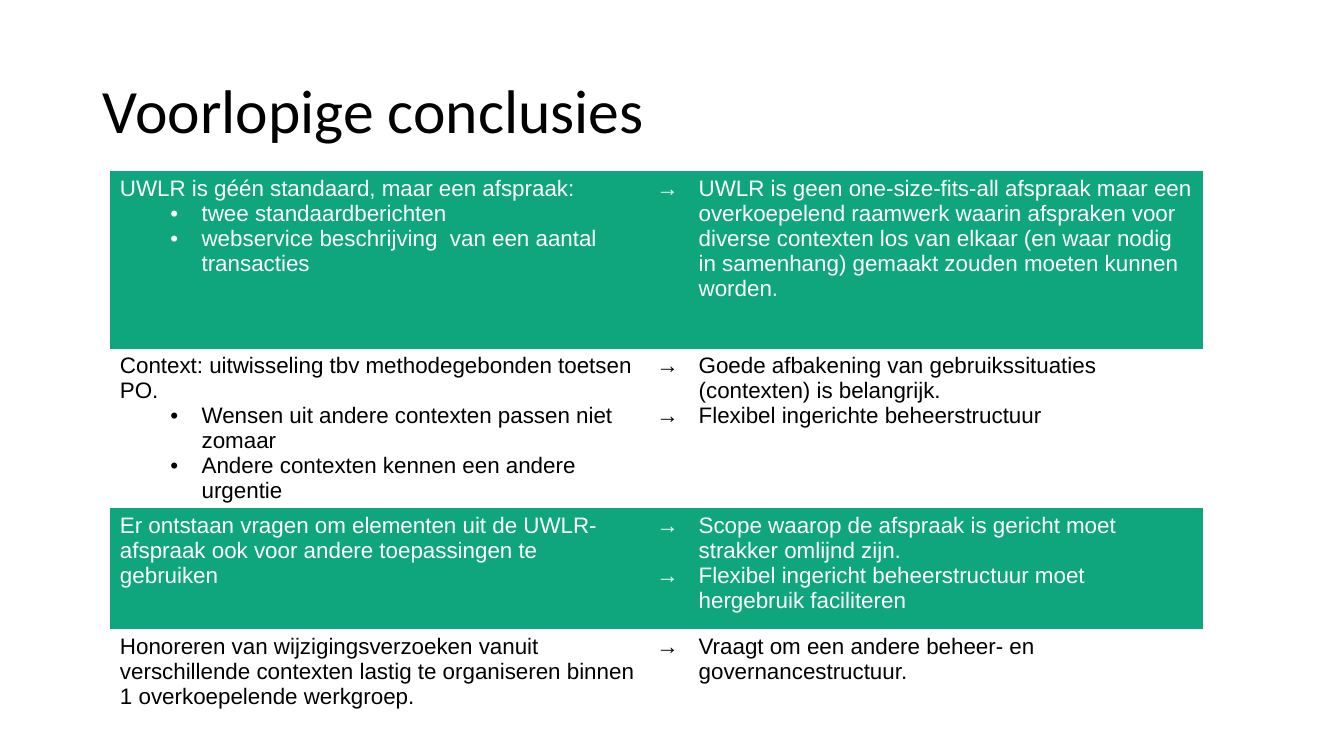
from dataclasses import dataclass

from lxml.etree import SubElement
from pptx import Presentation
from pptx.dml.color import RGBColor
from pptx.enum.text import MSO_ANCHOR, MSO_AUTO_SIZE, PP_ALIGN
from pptx.oxml.ns import qn
from pptx.util import Emu, Pt

GREEN = RGBColor(0x0F, 0xA6, 0x7E)
WHITE = RGBColor(0xFF, 0xFF, 0xFF)
BLACK = RGBColor(0x00, 0x00, 0x00)

PX_PER_INCH = 100
EMU_PER_PX = 914400 // PX_PER_INCH
PLAIN_TABLE_STYLE = "{2D5ABB26-0587-4C30-8999-92F81FD0307C}"
ARROW = "→"
LINE_GAP = 17.8  # height in points of one line of 16 pt text

COLUMN_WIDTHS = (532, 42, 510)


@dataclass(frozen=True)
class Finding:
    height: int
    statement: str
    points: tuple[str, ...]
    conclusions: tuple[str, ...]


FINDINGS = (
    Finding(
        176,
        "UWLR is géén standaard, maar een afspraak:",
        ("twee standaardberichten",
         "webservice beschrijving  van een aantal transacties"),
        ("UWLR is geen one-size-fits-all afspraak maar een overkoepelend raamwerk "
         "waarin afspraken voor diverse contexten los van elkaar (en waar nodig in "
         "samenhang) gemaakt zouden moeten kunnen worden.",),
    ),
    Finding(
        142,
        "Context: uitwisseling tbv methodegebonden toetsen PO.",
        ("Wensen uit andere contexten passen niet zomaar",
         "Andere contexten kennen een andere urgentie"),
        ("Goede afbakening van gebruikssituaties (contexten) is belangrijk.",
         "Flexibel ingerichte beheerstructuur"),
    ),
    Finding(
        120,
        "Er ontstaan vragen om elementen uit de UWLR-afspraak ook voor andere "
        "toepassingen te gebruiken",
        (),
        ("Scope waarop de afspraak is gericht moet strakker omlijnd zijn.",
         "Flexibel ingericht beheerstructuur moet hergebruik faciliteren"),
    ),
    Finding(
        120,
        "Honoreren van wijzigingsverzoeken vanuit verschillende contexten lastig te "
        "organiseren binnen 1 overkoepelende werkgroep.",
        (),
        ("Vraagt om een andere beheer- en governancestructuur.",),
    ),
)


def px(length: int) -> Emu:
    return Emu(length * EMU_PER_PX)


def add_bullet(para) -> None:
    para.level = 1
    properties = para._p.get_or_add_pPr()
    properties.set("marL", str(px(81)))
    properties.set("indent", str(px(-31)))
    SubElement(properties, qn("a:buFont"), typeface="Arial")
    SubElement(properties, qn("a:buChar"), char="•")


def write(frame, text: str, *, color: RGBColor, size: int = 16, font: str = "Arial",
          bullet: bool = False, before: float = 0, spacing: float = 1.0) -> None:
    """Fill the first paragraph, or add one when the frame already has text."""
    para = frame.add_paragraph() if frame.text else frame.paragraphs[0]
    para.alignment = PP_ALIGN.LEFT
    para.line_spacing = spacing
    para.space_before = Pt(before)
    if bullet:
        add_bullet(para)
    span = para.add_run()
    span.text = text
    span.font.size = Pt(size)
    span.font.name = font
    span.font.bold = False
    span.font.color.rgb = color


def add_title(page) -> None:
    box = page.shapes.title
    box.left, box.top, box.width, box.height = map(px, (92, 40, 1150, 145))
    frame = box.text_frame
    frame.auto_size = MSO_AUTO_SIZE.NONE
    frame.vertical_anchor = MSO_ANCHOR.MIDDLE
    write(frame, "Voorlopige conclusies", color=BLACK, size=44, font="Calibri",
          spacing=0.9)


def fill_row(cells, finding: Finding, fill: RGBColor, color: RGBColor) -> None:
    for cell in cells:
        cell.fill.solid()
        cell.fill.fore_color.rgb = fill
    statement, arrows, conclusions = (cell.text_frame for cell in cells)
    write(statement, finding.statement, color=color)
    for point in finding.points:
        write(statement, point, color=color, bullet=True)
    for index, conclusion in enumerate(finding.conclusions):
        write(arrows, ARROW, color=color, before=LINE_GAP if index else 0)
        write(conclusions, conclusion, color=color)


def add_findings(page) -> None:
    total_height = sum(finding.height for finding in FINDINGS)
    holder = page.shapes.add_table(len(FINDINGS), len(COLUMN_WIDTHS), px(109), px(170),
                                   px(sum(COLUMN_WIDTHS)), px(total_height))
    table = holder.table
    table.first_row = False
    table.horz_banding = False
    for style in table._tbl.iter(qn("a:tableStyleId")):
        style.text = PLAIN_TABLE_STYLE
    for column, width in zip(table.columns, COLUMN_WIDTHS):
        column.width = px(width)
    for index, (row, finding) in enumerate(zip(table.rows, FINDINGS)):
        row.height = px(finding.height)
        fill, color = (WHITE, BLACK) if index % 2 else (GREEN, WHITE)
        fill_row(list(row.cells), finding, fill, color)


def main() -> None:
    deck = Presentation()
    deck.slide_width, deck.slide_height = px(1333), px(750)
    page = deck.slides.add_slide(deck.slide_layouts[5])  # title only
    add_title(page)
    add_findings(page)
    deck.save("out.pptx")


if __name__ == "__main__":
    main()
